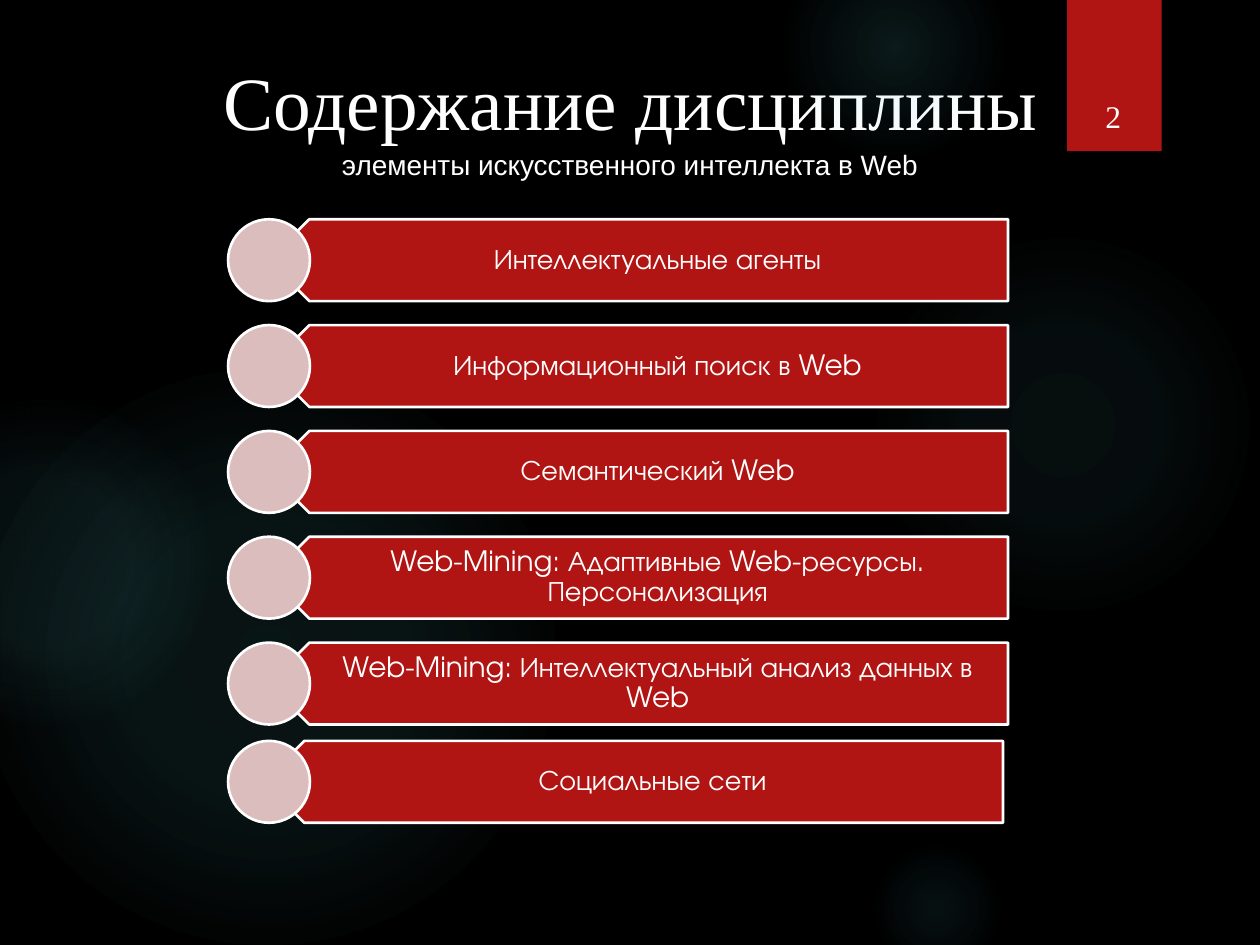
from dataclasses import dataclass

from lxml.etree import SubElement
from pptx import Presentation
from pptx.dml.color import RGBColor
from pptx.enum.shapes import MSO_SHAPE
from pptx.enum.text import MSO_ANCHOR, MSO_AUTO_SIZE, PP_ALIGN
from pptx.oxml.ns import qn
from pptx.util import Inches, Pt

COLORS = {"back": "000000", "glow": "50B9C1", "red": "B01513", "pink": "DCBDBD", "white": "FFFFFF"}
FONTS = {"title": "Times New Roman", "subtitle": "Arial", "item": "TeX Gyre Adventor"}
COLUMNS, ROWS = 40, 30

GLOWS = [
    (27.56, 7.32, 12.32, [(0, 7), (36, 6), (69, 0)]),
    (24.88, -2, 7, [(0, 14), (36, 7), (73, 0)]),
    (27.56, 26.68, 4.32, [(0, 9), (36, 5), (66, 0)]),
    (-0.68, 11.68, 18.32, [(0, 11), (36, 10), (75, 0)]),
    (-3.68, 12.68, 10.32, [(0, 8), (36, 8), (72, 0)]),
]
TOPICS = [
    "Интеллектуальные агенты",
    "Информационный поиск в Web",
    "Семантический Web",
    "Web-Mining: Адаптивные Web-ресурсы. Персонализация",
    "Web-Mining: Интеллектуальный анализ данных в Web",
]
LAST_TOPIC = "Социальные сети"
FIRST_ROW, ROW_STEP, LAST_ROW = 6.96, 3.36, 23.52
BAR_HEIGHT = 2.6


@dataclass
class Painter:
    """Hold the deck and its page and draw styled elements on a grid."""

    deck: object
    page: object

    def place(self, column, row, width, height):
        """Turn grid units into slide lengths."""
        across, down = self.deck.slide_width / COLUMNS, self.deck.slide_height / ROWS
        return [round(value) for value in (column * across, row * down, width * across, height * down)]

    def shape(self, kind, place, fill=None, outlined=False):
        """Add a flat preset shape."""
        shape = self.page.shapes.add_shape(kind, *self.place(*place))
        shape.shadow.inherit = False
        if fill:
            shape.fill.solid()
            shape.fill.fore_color.rgb = RGBColor.from_string(COLORS[fill])
        else:
            shape.fill.background()
        if outlined:
            shape.line.color.rgb = RGBColor.from_string(COLORS["white"])
            shape.line.width = Pt(1.5)
        else:
            shape.line.fill.background()
        return shape

    def glow(self, column, row, size, stops):
        """Add a circle that fades out from its centre."""
        shape = self.shape(MSO_SHAPE.OVAL, (column, row, size, size))
        properties = shape._element.spPr
        empty = properties.find(qn("a:noFill"))
        gradient = SubElement(properties, qn("a:gradFill"), rotWithShape="1")
        stop_list = SubElement(gradient, qn("a:gsLst"))
        for position, opacity in stops:
            stop = SubElement(stop_list, qn("a:gs"), pos=str(position * 1000))
            color = SubElement(stop, qn("a:srgbClr"), val=COLORS["glow"])
            SubElement(color, qn("a:alpha"), val=str(opacity * 1000))
        circle = SubElement(gradient, qn("a:path"), path="circle")
        SubElement(circle, qn("a:fillToRect"), l="50000", t="50000", r="50000", b="50000")
        properties.replace(empty, gradient)

    def tab(self, place):
        """Add the red page tab with a soft shadow below it."""
        shape = self.shape(MSO_SHAPE.RECTANGLE, place, "red")
        effects = shape._element.spPr.find(qn("a:effectLst"))
        shadow = SubElement(effects, qn("a:outerShdw"), blurRad=str(Pt(3)), dist=str(Pt(2)),
                            dir="5400000", rotWithShape="0")
        color = SubElement(shadow, qn("a:srgbClr"), val=COLORS["back"])
        SubElement(color, qn("a:alpha"), val="45000")

    def span(self, para, text, font, size):
        """Add one white run to a paragraph."""
        span = para.add_run()
        span.text = text
        span.font.name = FONTS[font]
        span.font.size = Pt(size)
        span.font.color.rgb = RGBColor.from_string(COLORS["white"])

    def title(self, place, heading, subtitle):
        """Fill the title placeholder with a heading and a smaller second line."""
        box = self.page.shapes.title
        box.left, box.top, box.width, box.height = self.place(*place)
        frame = box.text_frame
        frame.word_wrap = True
        frame.auto_size = MSO_AUTO_SIZE.NONE
        frame.vertical_anchor = MSO_ANCHOR.MIDDLE
        para = frame.paragraphs[0]
        para.alignment = PP_ALIGN.CENTER
        para.line_spacing = 1.04
        self.span(para, heading, "title", 43)
        para.add_line_break()
        self.span(para, subtitle, "subtitle", 16)

    def text(self, place, text, font, size):
        """Add a text box with one centred line and return it."""
        box = self.page.shapes.add_textbox(*self.place(*place))
        para = box.text_frame.paragraphs[0]
        para.alignment = PP_ALIGN.CENTER
        self.span(para, text, font, size)
        return box

    def topic(self, row, text, shift=0):
        """Add a red arrow bar, its label and the round marker before it."""
        bar = self.shape(MSO_SHAPE.PENTAGON, (8.52 + shift, row, 23.48, BAR_HEIGHT), "red", True)
        bar.rotation = 180
        frame = self.text((9.16 + shift, row, 22.8, BAR_HEIGHT), text, "item", 16).text_frame
        frame.word_wrap = True
        frame.vertical_anchor = MSO_ANCHOR.MIDDLE
        frame.margin_left, frame.margin_right = Inches(0.28), Inches(0.12)
        frame.margin_top = frame.margin_bottom = Inches(0.07)
        frame.paragraphs[0].line_spacing = 0.9
        self.shape(MSO_SHAPE.OVAL, (7.24, row, BAR_HEIGHT, BAR_HEIGHT), "pink", True)

    def page_number(self, place, number):
        """Add the page number as a box that grows with its text."""
        frame = self.text(place, number, "title", 18).text_frame
        frame.word_wrap = False
        frame.auto_size = MSO_AUTO_SIZE.SHAPE_TO_FIT_TEXT


def main():
    """Build the course contents slide."""
    deck = Presentation()
    deck.slide_width, deck.slide_height = Inches(10), Inches(7.5)
    page = deck.slides.add_slide(deck.slide_layouts[5])
    page.background.fill.solid()
    page.background.fill.fore_color.rgb = RGBColor.from_string(COLORS["back"])
    painter = Painter(deck, page)
    for glow in GLOWS:
        painter.glow(*glow)
    painter.tab((33.88, 0, 3, 4.8))
    painter.title((2, 1.2, 36, 5), "Содержание дисциплины", "элементы искусственного интеллекта в Web")
    for index, topic in enumerate(TOPICS):
        painter.topic(FIRST_ROW + index * ROW_STEP, topic)
    painter.topic(LAST_ROW, LAST_TOPIC, shift=-0.16)
    painter.page_number((34.68, 2.88, 1.32, 1.6), "2")
    deck.save("out.pptx")


if __name__ == "__main__":
    main()
